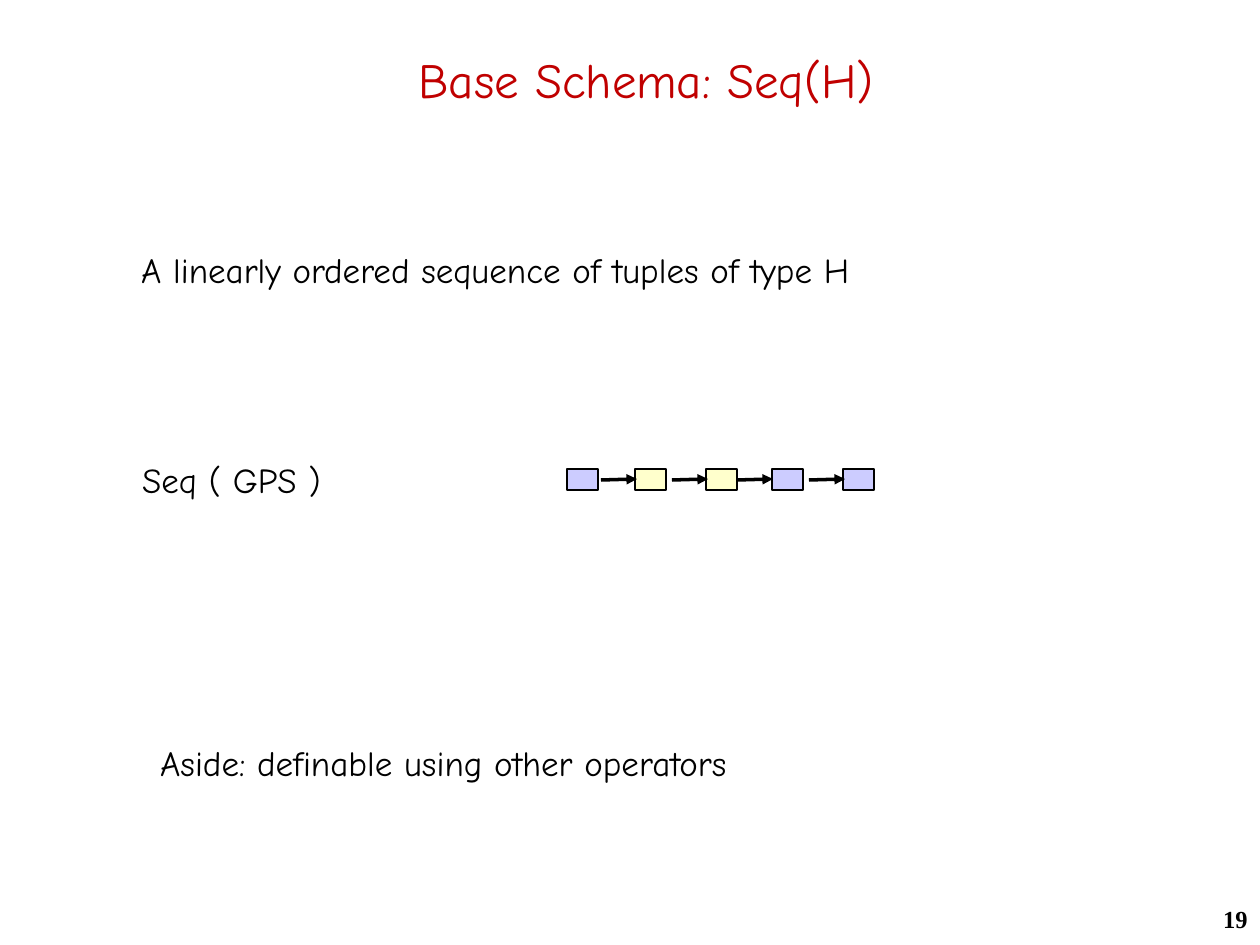
from lxml import etree
from pptx import Presentation
from pptx.dml.color import RGBColor
from pptx.enum.shapes import MSO_CONNECTOR, MSO_SHAPE
from pptx.enum.text import MSO_ANCHOR, PP_ALIGN
from pptx.oxml.ns import qn
from pptx.util import Emu, Pt

LEFT, CENTER, RIGHT = PP_ALIGN.LEFT, PP_ALIGN.CENTER, PP_ALIGN.RIGHT
TOP, MIDDLE = MSO_ANCHOR.TOP, MSO_ANCHOR.MIDDLE
RECT, LINE = MSO_SHAPE.RECTANGLE, MSO_CONNECTOR.STRAIGHT
SCALE = 914400 / 126
COLORS = {"black": "000000", "red": "C00000", "blue": "CCCCFF", "cream": "FFFFCC"}
BODY = {"name": "Comic Neue", "size": Pt(20), "bold": False}
TITLE = {"name": "Comic Neue", "size": Pt(28), "bold": False}
NUMBER = {"name": "Times New Roman", "size": Pt(14), "bold": True}


def px(*vals):
    return [Emu(round(val * SCALE)) for val in vals]


def tint(name):
    return RGBColor.from_string(COLORS[name])


class Deck:
    def __init__(self, wide, high):
        self.deck = Presentation()
        self.deck.slide_width, self.deck.slide_height = px(wide, high)
        self.slide = self.deck.slides.add_slide(self.deck.slide_layouts[6])

    def text(self, words, area, style=BODY, color="black",
             align=LEFT, anchor=TOP, wrap=True):
        frame = self.slide.shapes.add_textbox(*px(*area)).text_frame
        frame.word_wrap = wrap
        frame.vertical_anchor = anchor
        para = frame.paragraphs[0]
        para.alignment = align
        run = para.add_run()
        run.text = words
        for key, val in style.items():
            setattr(run.font, key, val)
        run.font.color.rgb = tint(color)

    def box(self, area, color):
        shape = self.slide.shapes.add_shape(RECT, *px(*area))
        shape.shadow.inherit = False
        shape.fill.solid()
        shape.fill.fore_color.rgb = tint(color)
        shape.line.color.rgb = tint("black")
        shape.line.width = Pt(0.75)

    def arrow(self, *ends):
        link = self.slide.shapes.add_connector(LINE, *px(*ends))
        link.line.color.rgb = tint("black")
        link.line.width = Pt(2)
        props = link.line._get_or_add_ln()
        etree.SubElement(props, qn("a:tailEnd"), type="triangle")
        etree.SubElement(link._element.spPr, qn("a:effectLst"))

    def save(self):
        self.deck.save("out.pptx")


def main():
    deck = Deck(1260, 945)
    deck.text("Base Schema: Seq(H)", (32, 42, 1228, 73), TITLE, "red", CENTER, MIDDLE)
    deck.text("19", (1197, 898, 63, 47), NUMBER, align=RIGHT)
    deck.text(" Seq ( GPS )", (118, 452, 223, 55), wrap=False)

    colors = ["blue", "cream", "cream", "blue", "blue"]
    for left, color in zip([567, 635, 706, 772, 843], colors):
        deck.box((left, 469, 31, 21), color)
    for left in [601, 672, 737, 809]:
        deck.arrow(left, 480, left + 36, 479)

    deck.text(" Aside: definable using other operators", (136, 735, 903, 55))
    deck.text(" A linearly ordered sequence of tuples of type H", (117, 242, 1080, 55))
    deck.save()


if __name__ == "__main__":
    main()
